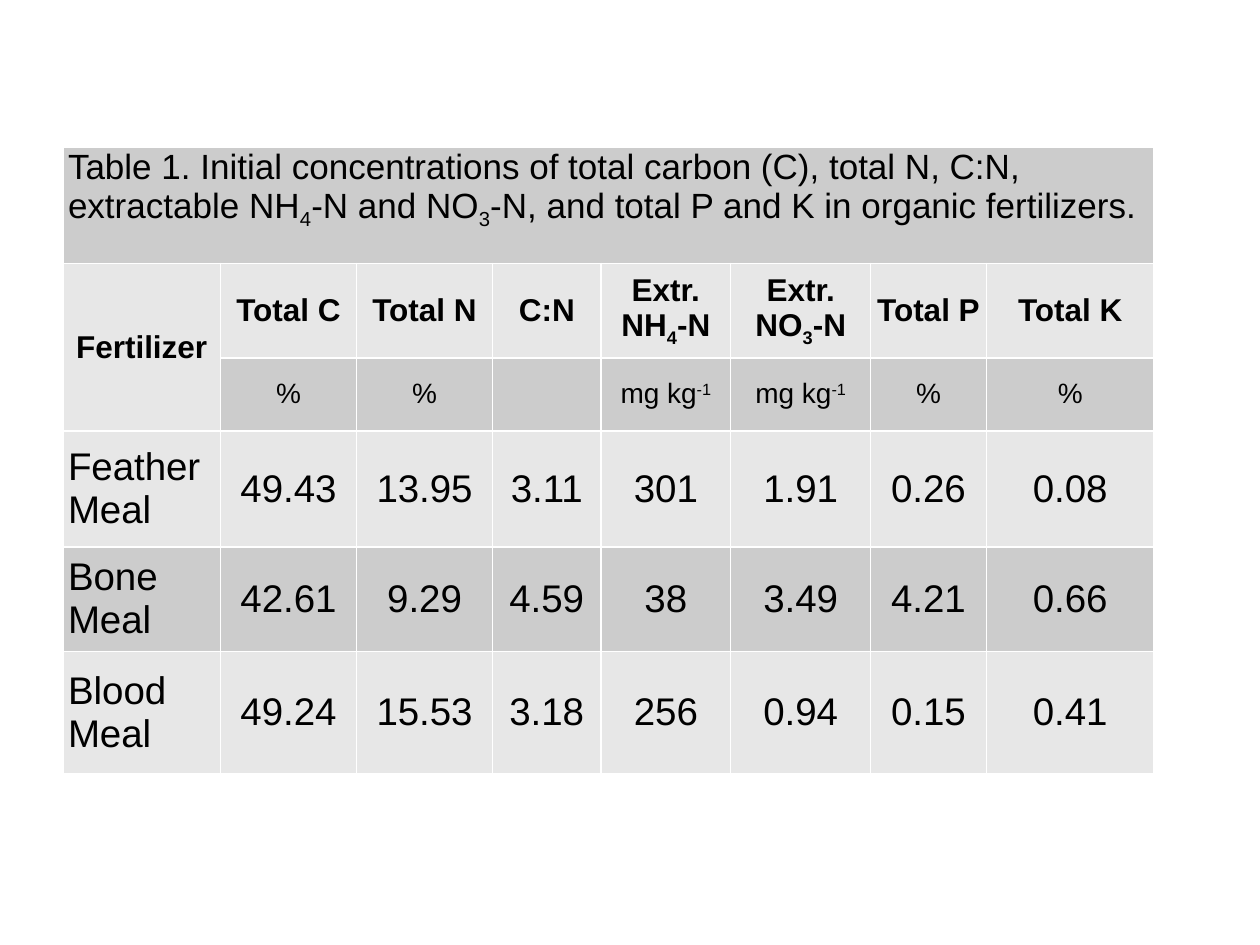
from dataclasses import dataclass

from lxml.etree import SubElement
from pptx import Presentation
from pptx.dml.color import RGBColor
from pptx.enum.text import MSO_ANCHOR as Anchor, PP_ALIGN as Align
from pptx.oxml.ns import qn
from pptx.table import _Cell as Cell
from pptx.util import Inches, Pt

BLACK = RGBColor(0x00, 0x00, 0x00)
WHITE = RGBColor(0xFF, 0xFF, 0xFF)
DARK_BAND = RGBColor(0xCC, 0xCC, 0xCC)
LIGHT_BAND = RGBColor(0xE7, 0xE7, 0xE7)

BASELINES = {"_": "-25000", "^": "30000"}
COLUMN_WIDTHS = [1.25, 1.08, 1.08, 0.86, 1.03, 1.11, 0.92, 1.33]


@dataclass(frozen=True)
class Row:
    height: float
    size: int
    texts: tuple[str, ...]
    bold: bool = False
    first_align: Align = Align.LEFT
    anchor: Anchor = Anchor.MIDDLE


CAPTION = (
    "Table 1. Initial concentrations of total carbon (C), total N, C:N, "
    "extractable NH|_4|-N and NO|_3|-N, and total P and K in organic fertilizers."
)
ROWS = [
    Row(0.92, 20, (CAPTION,), anchor=Anchor.TOP),
    Row(0.75, 18, ("Fertilizer", "Total C", "Total N", "C:N", "Extr. NH|_4|-N",
                   "Extr. NO|_3|-N", "Total P", "Total K"), True, Align.CENTER),
    Row(0.58, 16, ("", "%", "%", "", "mg kg|^-1", "mg kg|^-1", "%", "%")),
    Row(0.92, 22, ("Feather Meal", "49.43", "13.95", "3.11", "301", "1.91", "0.26", "0.08")),
    Row(0.83, 22, ("Bone Meal", "42.61", "9.29", "4.59", "38", "3.49", "4.21", "0.66")),
    Row(0.97, 22, ("Blood Meal", "49.24", "15.53", "3.18", "256", "0.94", "0.15", "0.41")),
]


def add_borders(cell: Cell) -> None:
    tc_pr = cell._tc.get_or_add_tcPr()
    for i, side in enumerate(("lnL", "lnR", "lnT", "lnB")):
        ln = SubElement(tc_pr, qn(f"a:{side}"), w=str(Pt(1)))
        fill = SubElement(ln, qn("a:solidFill"))
        SubElement(fill, qn("a:srgbClr"), val=str(WHITE))
        tc_pr.insert(i, ln)


def write_cell(cell: Cell, text: str, row: Row, align: Align) -> None:
    cell.margin_left = cell.margin_right = Inches(0.04)
    cell.margin_top = cell.margin_bottom = 0
    cell.vertical_anchor = row.anchor
    p = cell.text_frame.paragraphs[0]
    p.alignment = align
    p.font.name = "Arial"
    p.font.size = Pt(row.size)
    p.font.bold = row.bold
    p.font.color.rgb = BLACK
    for part in filter(None, text.split("|")):
        r = p.add_run()
        baseline = BASELINES.get(part[0])
        r.text = part[1:] if baseline else part
        if baseline:
            r._r.get_or_add_rPr().set("baseline", baseline)


def main() -> None:
    prs = Presentation()
    prs.slide_width, prs.slide_height = Inches(10), Inches(7.5)
    s = prs.slides.add_slide(prs.slide_layouts[6])
    table = s.shapes.add_table(
        len(ROWS), len(COLUMN_WIDTHS), Inches(0.5), Inches(1.17),
        Inches(sum(COLUMN_WIDTHS)), Inches(sum(row.height for row in ROWS)),
    ).table
    for column, width in zip(table.columns, COLUMN_WIDTHS):
        column.width = Inches(width)
    table.cell(0, 0).merge(table.cell(0, len(COLUMN_WIDTHS) - 1))
    table.cell(1, 0).merge(table.cell(2, 0))

    for i, row in enumerate(ROWS):
        table.rows[i].height = Inches(row.height)
        for j in range(len(COLUMN_WIDTHS)):
            cell = table.cell(i, j)
            cell.fill.solid()
            cell.fill.fore_color.rgb = LIGHT_BAND if i % 2 else DARK_BAND
            add_borders(cell)
        for j, text in enumerate(row.texts):
            align = Align.CENTER if j else row.first_align
            write_cell(table.cell(i, j), text, row, align)

    prs.save("out.pptx")


if __name__ == "__main__":
    main()
